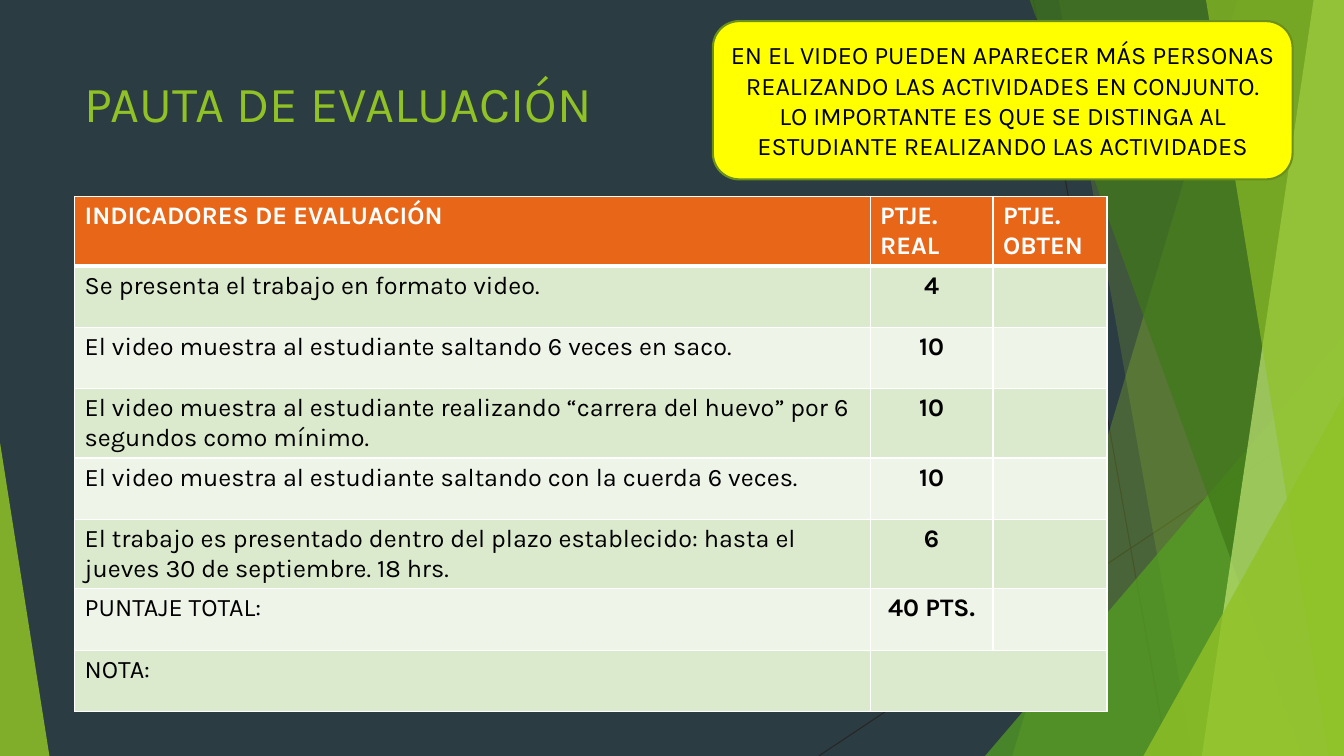
"""Build the evaluation rubric slide."""
from dataclasses import dataclass

import pptx
import pptx.dml.color
import pptx.enum.shapes
import pptx.enum.text
import pptx.oxml.ns
import pptx.oxml.xmlchemy
import pptx.util

PX = 9144
WIDTH, HEIGHT = 1333, 750
SHAPE = pptx.enum.shapes.MSO_SHAPE
ALIGN = pptx.enum.text.PP_ALIGN
ANCHOR = pptx.enum.text.MSO_ANCHOR


@dataclass(frozen=True)
class Theme:
    font: str = "Karla"
    title_size: int = 36
    body_size: int = 18
    background: str = "2C3C43"
    lime: str = "90C226"
    green: str = "54A021"
    forest: str = "3F7819"
    pale: str = "C0E474"
    hairline: str = "262626"
    header: str = "E76618"
    bands: tuple = ("DBE9CD", "EEF4E8")
    note: str = "FFFF00"
    note_line: str = "6B901C"
    white: str = "FFFFFF"
    black: str = "000000"


def rgb(color):
    return pptx.dml.color.RGBColor.from_string(color)


def element(tag, **attrs):
    el = pptx.oxml.xmlchemy.OxmlElement(tag)
    for name, value in attrs.items():
        el.set(name, str(value))
    return el


class Deck:
    def __init__(self, theme):
        self.theme = theme
        self.prs = pptx.Presentation()
        self.prs.slide_width = WIDTH * PX
        self.prs.slide_height = HEIGHT * PX
        self.s = self.prs.slides.add_slide(self.prs.slide_layouts[5])
        fill = self.s.background.fill
        fill.solid()
        fill.fore_color.rgb = rgb(theme.background)

    def style(self, p, size, color, bold=False, align=ALIGN.LEFT):
        p.alignment = align
        p.font.name = self.theme.font
        p.font.size = pptx.util.Pt(size)
        p.font.bold = bold
        p.font.color.rgb = rgb(color)

    def paint(self, sp, color, opacity=100):
        sp.shadow.inherit = False
        sp.line.fill.background()
        sp.fill.solid()
        sp.fill.fore_color.rgb = rgb(color)
        if opacity < 100:
            clr = sp._element.spPr.find(".//" + pptx.oxml.ns.qn("a:srgbClr"))
            clr.append(element("a:alpha", val=opacity * 1000))

    def line(self, x1, y1, x2, y2):
        c = self.s.shapes.add_connector(
            pptx.enum.shapes.MSO_CONNECTOR.STRAIGHT, x1 * PX, y1 * PX, x2 * PX, y2 * PX)
        c.line.color.rgb = rgb(self.theme.hairline)
        c.line.width = pptx.util.Pt(0.75)
        c._element.spPr.append(element("a:effectLst"))

    def facet(self, top_x, bottom_x, color, opacity):
        fb = self.s.shapes.build_freeform(top_x, -1, scale=PX)
        fb.add_line_segments([(WIDTH, -1), (WIDTH, HEIGHT), (bottom_x, HEIGHT)])
        self.paint(fb.convert_to_shape(), color, opacity)

    def triangle(self, x, y, w, apex, color, opacity):
        sp = self.s.shapes.add_shape(
            SHAPE.ISOSCELES_TRIANGLE, x * PX, y * PX, w * PX, (HEIGHT - y) * PX)
        sp.adjustments[0] = apex
        self.paint(sp, color, opacity)

    def title(self, text, x, y, w, h):
        sp = self.s.shapes.title
        sp.left, sp.top, sp.width, sp.height = (v * PX for v in (x, y, w, h))
        tf = sp.text_frame
        tf.text = text
        tf.word_wrap = True
        tf.vertical_anchor = ANCHOR.TOP
        self.style(tf.paragraphs[0], self.theme.title_size, self.theme.lime)
        self.s.shapes._spTree.append(sp._element)

    def note(self, text, x, y, w, h):
        sp = self.s.shapes.add_shape(
            SHAPE.ROUNDED_RECTANGLE, x * PX, y * PX, w * PX, h * PX)
        self.paint(sp, self.theme.note)
        sp.line.color.rgb = rgb(self.theme.note_line)
        sp.line.width = pptx.util.Pt(1.5)
        tf = sp.text_frame
        tf.word_wrap = True
        tf.vertical_anchor = ANCHOR.MIDDLE
        tf.text = text
        for p in tf.paragraphs:
            self.style(p, self.theme.body_size, self.theme.black, align=ALIGN.CENTER)

    def borders(self, cell, top, bottom):
        tcPr = cell._tc.get_or_add_tcPr()
        for side, width in (("L", 1), ("R", 1), ("T", top), ("B", bottom)):
            ln = element("a:ln" + side, w=int(pptx.util.Pt(width)))
            fill = element("a:solidFill")
            fill.append(element("a:srgbClr", val=self.theme.white))
            ln.append(fill)
            tcPr.append(ln)

    def table(self, rows, x, y, widths, row_h):
        t = self.theme
        tbl = self.s.shapes.add_table(
            len(rows), len(widths), x * PX, y * PX,
            sum(widths) * PX, len(rows) * row_h * PX).table
        for col, w in zip(tbl.columns, widths):
            col.width = w * PX
        for i, row in enumerate(rows):
            tbl.rows[i].height = row_h * PX
            head = i == 0
            for j, text in enumerate(row):
                cell = tbl.cell(i, j)
                self.borders(cell, 3 if i == 1 else 1, 3 if head else 1)
                cell.fill.solid()
                cell.fill.fore_color.rgb = rgb(t.header if head else t.bands[(i - 1) % 2])
                cell.text = text
                self.style(cell.text_frame.paragraphs[0], t.body_size,
                           t.white if head else t.black, head or j > 0,
                           ALIGN.LEFT if head or j == 0 else ALIGN.CENTER)
        return tbl


ROWS = [
    ("INDICADORES DE EVALUACIÓN", "PTJE. REAL", "PTJE. OBTEN"),
    ("Se presenta el trabajo en formato video.", "4", ""),
    ("El video muestra al estudiante saltando 6 veces en saco.", "10", ""),
    ("El video muestra al estudiante realizando “carrera del huevo” por 6 segundos "
     "como mínimo.", "10", ""),
    ("El video muestra al estudiante saltando con la cuerda 6 veces.", "10", ""),
    ("El trabajo es presentado dentro del plazo establecido: hasta el jueves 30 de "
     "septiembre. 18 hrs.", "6", ""),
    ("PUNTAJE TOTAL:", "40 PTS.", ""),
    ("NOTA:", "", ""),
]
NOTE = ("EN EL VIDEO PUEDEN APARECER MÁS PERSONAS REALIZANDO LAS ACTIVIDADES EN CONJUNTO.\n"
        "LO IMPORTANTE ES QUE SE DISTINGA AL ESTUDIANTE REALIZANDO LAS ACTIVIDADES")


def main():
    t = Theme()
    deck = Deck(t)
    deck.line(1025, 0, 1158, HEIGHT)
    deck.line(WIDTH, 403, 812, HEIGHT)
    deck.facet(1228, 1004, t.lime, 30)
    deck.facet(1050, 1183, t.lime, 20)
    deck.triangle(977, 333, 356, 1, t.green, 72)
    deck.facet(1021, 1291, t.forest, 70)
    deck.facet(1303, 1192, t.pale, 70)
    deck.facet(1196, 1318, t.lime, 65)
    deck.triangle(1134, 393, 199, 1, t.lime, 80)
    deck.triangle(0, 439, 49, 0, t.lime, 85)
    deck.title("PAUTA DE EVALUACIÓN", 74, 67, 940, 144)
    tbl = deck.table(ROWS, 74, 195, (789, 122, 113), 61)
    tbl.cell(7, 1).merge(tbl.cell(7, 2))
    deck.note(NOTE, 707, 21, 575, 157)
    deck.prs.save("out.pptx")


if __name__ == "__main__":
    main()
